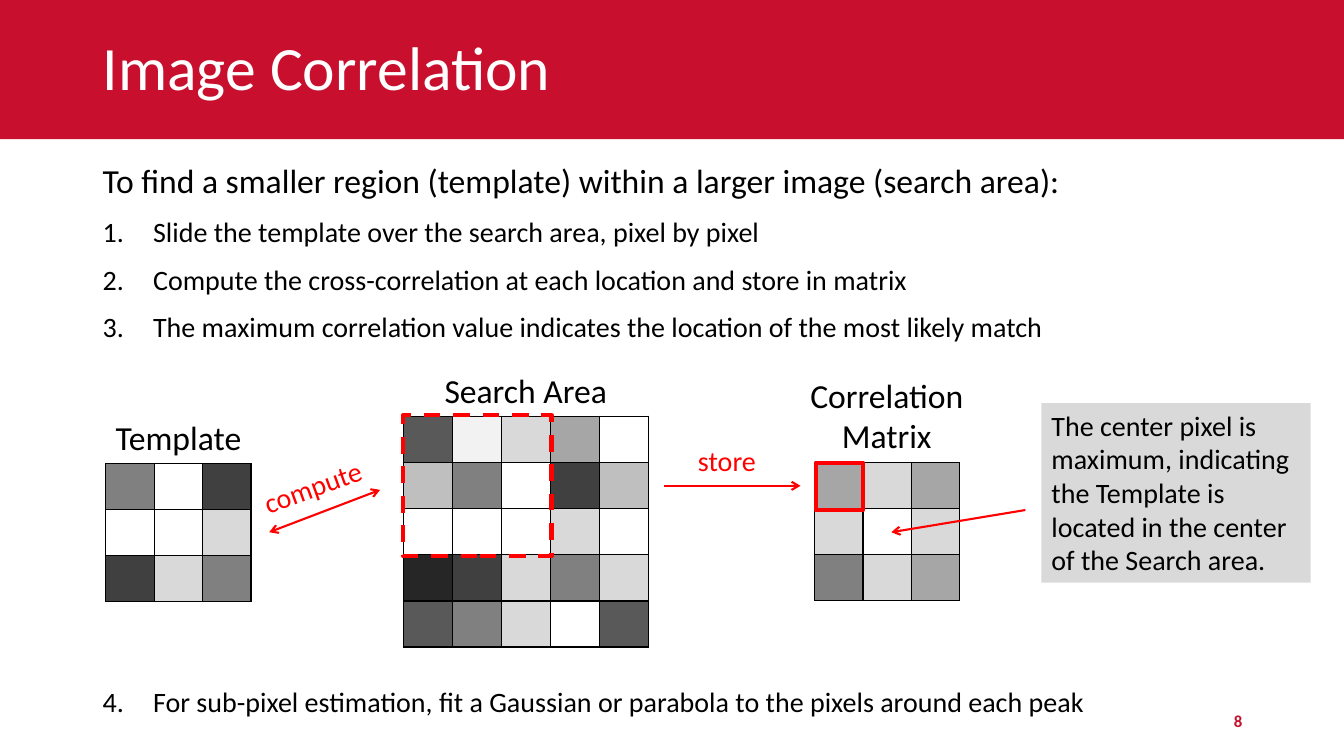
from dataclasses import dataclass

from lxml.etree import SubElement
from pptx import Presentation
from pptx.dml.color import RGBColor
from pptx.enum.dml import MSO_LINE
from pptx.enum.shapes import MSO_CONNECTOR, MSO_SHAPE
from pptx.enum.text import MSO_ANCHOR, PP_ALIGN
from pptx.oxml.ns import qn
from pptx.util import Inches, Pt

FONT = "Calibri"
COLORS = {"brand": "C8102E", "white": "FFFFFF", "black": "000000",
          "red": "FF0000", "note": "D9D9D9"}


@dataclass
class Box:
    left: float
    top: float
    width: float
    height: float

    def lengths(self) -> list:
        return [Inches(v) for v in (self.left, self.top, self.width, self.height)]


@dataclass
class PixelGrid:
    box: Box
    shades: list[str]  # one row per string, grey levels as two hex digits


@dataclass
class Label:
    text: str
    box: Box
    size: int = 24
    color: str = "black"
    rotation: float = 0


@dataclass
class Arrow:
    start: tuple[float, float]
    end: tuple[float, float]
    both_ways: bool = False


@dataclass
class Outline:
    box: Box
    dashed: bool = False


GRIDS = [
    PixelGrid(Box(4, 4.13, 2.43, 2.29), ["59 F2 D9 A6 FF", "BF 80 FF 40 BF",
                                         "FF FF FF D9 FF", "26 40 D9 80 D9",
                                         "59 80 D9 FF 59"]),
    PixelGrid(Box(1.05, 4.6, 1.44, 1.37), ["80 FF 40", "FF FF D9", "40 D9 80"]),
    PixelGrid(Box(8.08, 4.59, 1.44, 1.37), ["A6 D9 A6", "D9 FF D9", "80 D9 A6"]),
]
LABELS = [
    Label("Template", Box(1, 4.09, 1.54, 0.5)),
    Label("Search Area", Box(4, 3.62, 2.43, 0.5)),
    Label("Correlation Matrix", Box(7.58, 3.67, 2.43, 0.91)),
    Label("compute", Box(2.33, 4.61, 1.54, 0.44), 20, "red", 340.2),
    Label("store", Box(6.44, 4.35, 1.54, 0.44), 20, "red"),
]
ARROWS = [
    Arrow((2.67, 5.28), (3.77, 4.86), both_ways=True),
    Arrow((6.59, 4.82), (7.94, 4.82)),
    Arrow((10.17, 5.06), (8.84, 5.28)),
]
OUTLINES = [Outline(Box(4, 4.12, 1.47, 1.4), dashed=True),
            Outline(Box(8.09, 4.59, 0.47, 0.47))]
INTRO = "To find a smaller region (template) within a larger image (search area):"
STEPS = [
    "Slide the template over the search area, pixel by pixel",
    "Compute the cross-correlation at each location and store in matrix",
    "The maximum correlation value indicates the location of the most likely match",
]
LAST_STEP = "For sub-pixel estimation, fit a Gaussian or parabola to the pixels around each peak"
NOTE = ("The center pixel is maximum, indicating the Template is "
        "located in the center of the Search area.")


def rgb(name: str) -> RGBColor:
    return RGBColor.from_string(COLORS[name])


def style(paragraph, size: int, color: str = "black", bold: bool = False) -> None:
    for run in paragraph.runs:
        run.font.name = FONT
        run.font.size = Pt(size)
        run.font.bold = bold
        run.font.color.rgb = rgb(color)


def number(paragraph, start: int = 1) -> None:
    """Give the paragraph a hanging automatic number."""
    properties = paragraph._p.get_or_add_pPr()
    properties.set("marL", str(Inches(0.5)))
    properties.set("indent", str(-Inches(0.5)))
    SubElement(properties, qn("a:buFont"), typeface="+mj-lt")
    SubElement(properties, qn("a:buAutoNum"), type="arabicPeriod", startAt=str(start))


def add_text(slide, box: Box, text: str):
    frame_box = slide.shapes.add_textbox(*box.lengths())
    frame_box.text_frame.word_wrap = True
    frame_box.text_frame.text = text
    return frame_box


def add_rectangle(slide, box: Box, fill: str):
    rectangle = slide.shapes.add_shape(MSO_SHAPE.RECTANGLE, *box.lengths())
    rectangle.shadow.inherit = False
    rectangle.fill.solid()
    rectangle.fill.fore_color.rgb = rgb(fill)
    rectangle.line.fill.background()
    return rectangle


def add_label(slide, label: Label) -> None:
    caption = add_text(slide, label.box, label.text)
    caption.rotation = label.rotation
    paragraph = caption.text_frame.paragraphs[0]
    paragraph.alignment = PP_ALIGN.CENTER
    style(paragraph, label.size, label.color)


def add_grid(slide, grid: PixelGrid) -> None:
    rows = [row.split() for row in grid.shades]
    table = slide.shapes.add_table(len(rows), len(rows[0]), *grid.box.lengths()).table
    table.first_row = table.horz_banding = False
    for r, row in enumerate(rows):
        for c, shade in enumerate(row):
            cell = table.cell(r, c)
            properties = cell._tc.get_or_add_tcPr()
            for side in ("lnL", "lnR", "lnT", "lnB"):
                border = SubElement(properties, qn(f"a:{side}"), w=str(Pt(1)))
                fill = SubElement(border, qn("a:solidFill"))
                SubElement(fill, qn("a:srgbClr"), val=COLORS["black"])
            cell.fill.solid()
            cell.fill.fore_color.rgb = RGBColor.from_string(shade * 3)


def add_arrow(slide, arrow: Arrow) -> None:
    points = [Inches(v) for v in (*arrow.start, *arrow.end)]
    connector = slide.shapes.add_connector(MSO_CONNECTOR.STRAIGHT, *points)
    connector.line.color.rgb = rgb("red")
    connector.line.width = Pt(1.5)
    line = connector.line._get_or_add_ln()
    for end in ("headEnd", "tailEnd") if arrow.both_ways else ("tailEnd",):
        SubElement(line, qn(f"a:{end}"), type="arrow")
    SubElement(connector._element.spPr, qn("a:effectLst"))


def add_outline(slide, outline: Outline) -> None:
    frame = add_rectangle(slide, outline.box, "white")
    frame.fill.background()
    frame.line.color.rgb = rgb("red")
    frame.line.width = Pt(3)
    if outline.dashed:
        frame.line.dash_style = MSO_LINE.DASH


def add_heading(slide) -> None:
    banner = add_rectangle(slide, Box(0, 0, 13.33, 1.38), "brand")
    title = slide.shapes.title
    title._element.addprevious(banner._element)
    title.left, title.top, title.width, title.height = Box(0.92, 0.13, 11.5, 1.13).lengths()
    title.text_frame.text = "Image Correlation"
    title.text_frame.vertical_anchor = MSO_ANCHOR.MIDDLE
    paragraph = title.text_frame.paragraphs[0]
    paragraph.alignment = PP_ALIGN.LEFT
    paragraph.line_spacing = 0.9
    style(paragraph, 44, "white")


def add_steps(slide) -> None:
    frame = add_text(slide, Box(0.92, 1.54, 11.5, 2), INTRO).text_frame
    style(frame.paragraphs[0], 24)
    for step in STEPS:
        paragraph = frame.add_paragraph()
        paragraph.text = step
        paragraph.space_before = Pt(10)
        number(paragraph)
        style(paragraph, 20)
    last = add_text(slide, Box(0.92, 6.74, 11.5, 0.44), LAST_STEP).text_frame.paragraphs[0]
    number(last, start=len(STEPS) + 1)
    style(last, 20)


def add_note(slide) -> None:
    note = add_rectangle(slide, Box(10.33, 4, 2.67, 1.78), "note")
    note.text_frame.word_wrap = True
    note.text_frame.text = NOTE
    note.text_frame.vertical_anchor = MSO_ANCHOR.TOP
    note.text_frame.paragraphs[0].alignment = PP_ALIGN.LEFT
    style(note.text_frame.paragraphs[0], 20)


def add_page_number(slide) -> None:
    frame = add_text(slide, Box(9.42, 6.95, 3, 0.4), "8").text_frame
    frame.vertical_anchor = MSO_ANCHOR.MIDDLE
    frame.paragraphs[0].alignment = PP_ALIGN.RIGHT
    style(frame.paragraphs[0], 12, "brand", bold=True)


def main() -> None:
    deck = Presentation()
    deck.slide_width, deck.slide_height = Inches(13.33), Inches(7.5)
    slide = deck.slides.add_slide(deck.slide_layouts[5])
    add_heading(slide)
    add_steps(slide)
    add_page_number(slide)
    for draw, items in ((add_grid, GRIDS), (add_label, LABELS),
                        (add_outline, OUTLINES), (add_arrow, ARROWS)):
        for item in items:
            draw(slide, item)
    add_note(slide)
    deck.save("out.pptx")


if __name__ == "__main__":
    main()
